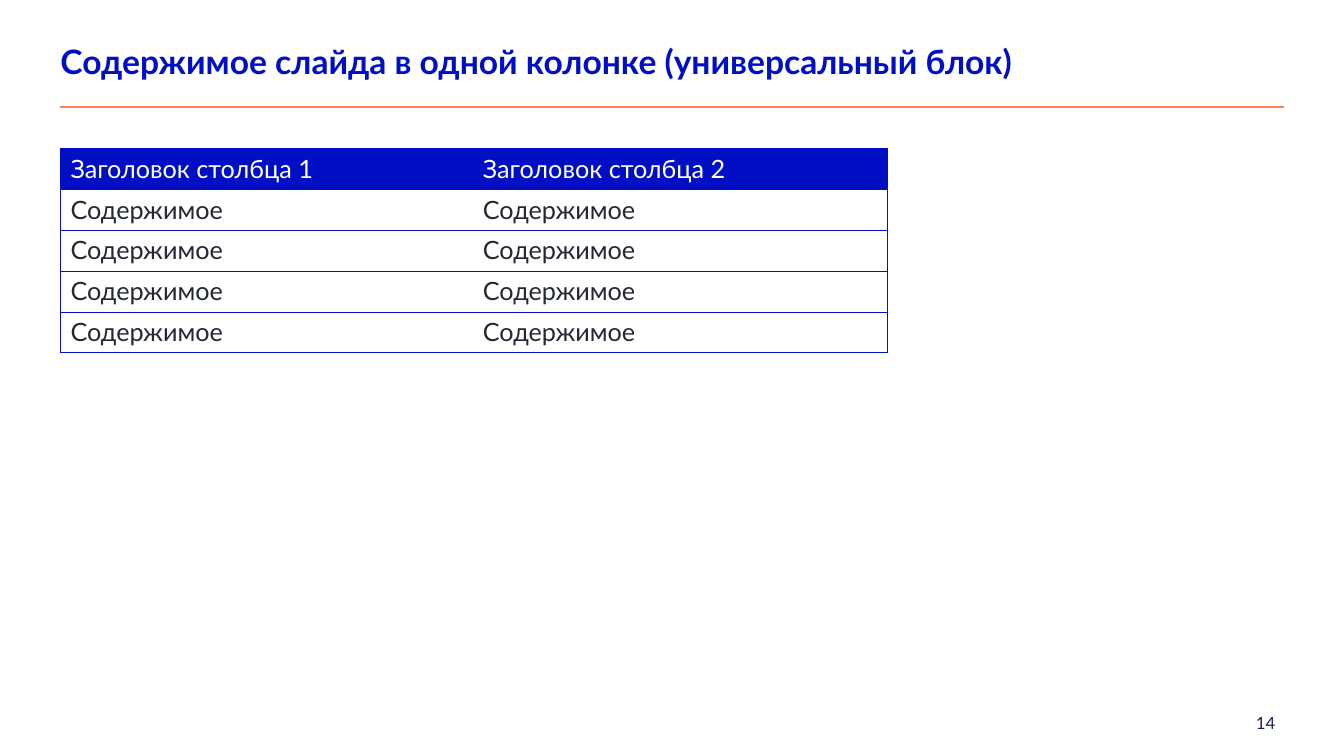
from lxml.etree import SubElement as Sub
from pptx import Presentation
from pptx.dml.color import RGBColor
from pptx.enum.shapes import MSO_CONNECTOR as Link
from pptx.enum.text import MSO_ANCHOR as Anchor, PP_ALIGN as Align
from pptx.oxml.ns import qn
from pptx.util import Inches, Pt

BLUE = "000FC4"
WHITE = "FFFFFF"
ORANGE = "FF8151"
NAVY = "171B68"
DARK = "242834"
LEFT = 0.6


def paint(target, color):
    target.rgb = RGBColor.from_string(color)


def assign(item, values):
    for name, value in values.items():
        setattr(item, name, value)


def style(para, size, color, bold=False):
    assign(para.font, {"name": "Lato", "size": Pt(size), "bold": bold})
    paint(para.font.color, color)


def frame(shape, text, anchor):
    body = shape.text_frame
    assign(body, {
        "text": text, "word_wrap": True, "vertical_anchor": anchor,
        "margin_left": 0, "margin_right": 0,
        "margin_top": 0, "margin_bottom": 0,
    })
    return body.paragraphs[0]


def add_title(slide, text):
    title = slide.shapes.title
    assign(title, {
        "left": Inches(LEFT), "top": Inches(0.45),
        "width": Inches(10.51), "height": Inches(0.36),
    })
    para = frame(title, text, Anchor.MIDDLE)
    assign(para, {"alignment": Align.LEFT, "line_spacing": 0.9})
    style(para, 24, BLUE, True)


def add_rule(slide):
    y = Inches(1.06)
    rule = slide.shapes.add_connector(
        Link.STRAIGHT, Inches(LEFT), y, Inches(12.73), y)
    paint(rule.line.color, ORANGE) if rule.line.fill.solid() else None
    paint(rule.line.color, ORANGE)
    rule.line.width = Pt(1.25)
    Sub(rule.element.spPr, qn("a:effectLst"))


def add_number(slide, text):
    box = slide.shapes.add_textbox(
        Inches(10.23), Inches(7.07), Inches(2.42), Inches(0.2))
    para = frame(box, text, Anchor.TOP)
    para.alignment = Align.RIGHT
    style(para, 12, NAVY)


def add_edges(cell, shown):
    props = cell._tc.get_or_add_tcPr()
    for side in "LRTB":
        edge = Sub(props, qn(f"a:ln{side}"), w=str(Pt(0.5)))
        if side in shown:
            fill = Sub(edge, qn("a:solidFill"))
            Sub(fill, qn("a:srgbClr"), val=BLUE)
        else:
            Sub(edge, qn("a:noFill"))


def add_grid(slide, rows, widths):
    grid = slide.shapes.add_table(
        len(rows), len(widths), Inches(LEFT), Inches(1.47),
        Inches(sum(widths)), Inches(2.03)).table
    grid.horz_banding = False
    for col, width in zip(grid.columns, widths):
        col.width = Inches(width)
    for r, row in enumerate(rows):
        for c, text in enumerate(row):
            cell = grid.cell(r, c)
            cell.text = text
            style(cell.text_frame.paragraphs[0], 18, DARK if r else WHITE)
            add_edges(cell, "RTB" if c else "LTB")
            cell.fill.solid()
            paint(cell.fill.fore_color, WHITE if r else BLUE)


def main():
    deck = Presentation()
    assign(deck, {"slide_width": Inches(13.33), "slide_height": Inches(7.5)})
    slide = deck.slides.add_slide(deck.slide_layouts[5])
    add_rule(slide)
    add_number(slide, "14")
    add_title(slide, "Содержимое слайда в одной колонке (универсальный блок)")
    heads = [f"Заголовок столбца {n}" for n in (1, 2)]
    add_grid(slide, [heads] + [["Содержимое"] * 2] * 4, [4.09, 4.11])
    deck.save("out.pptx")


if __name__ == "__main__":
    main()
